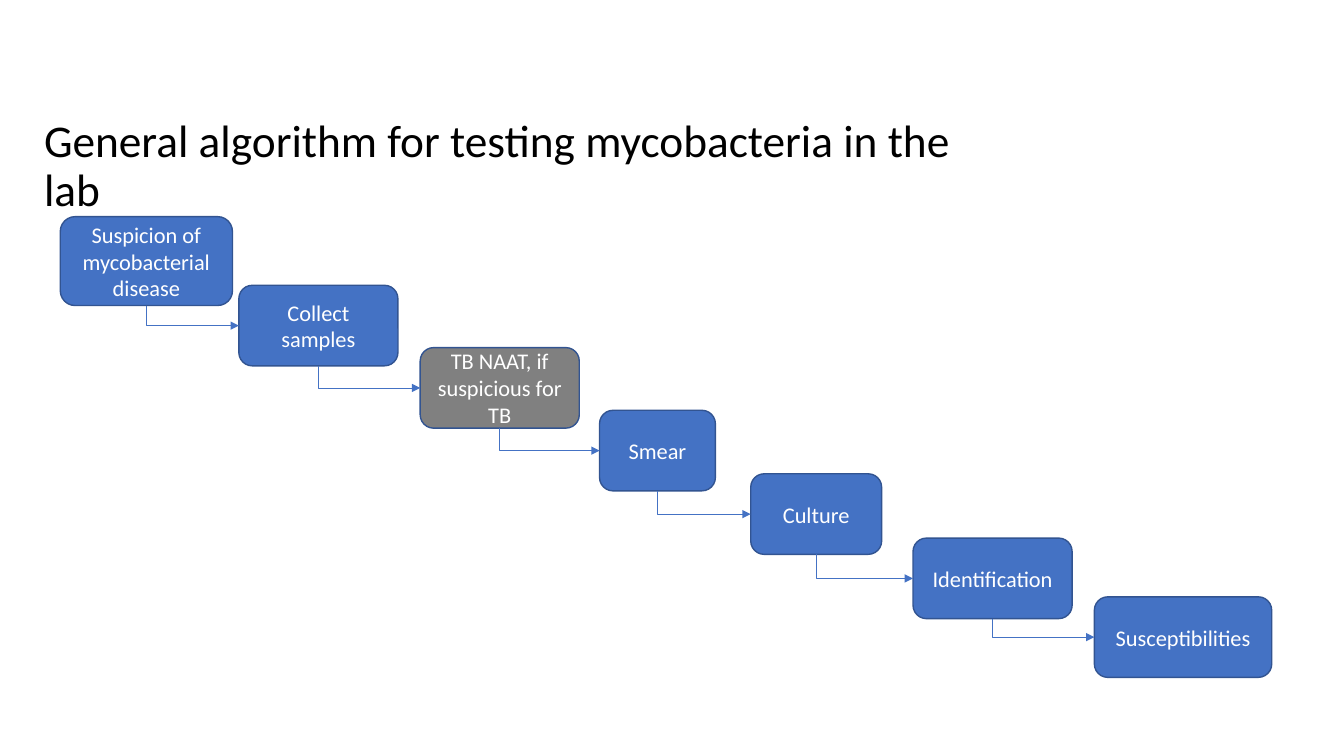
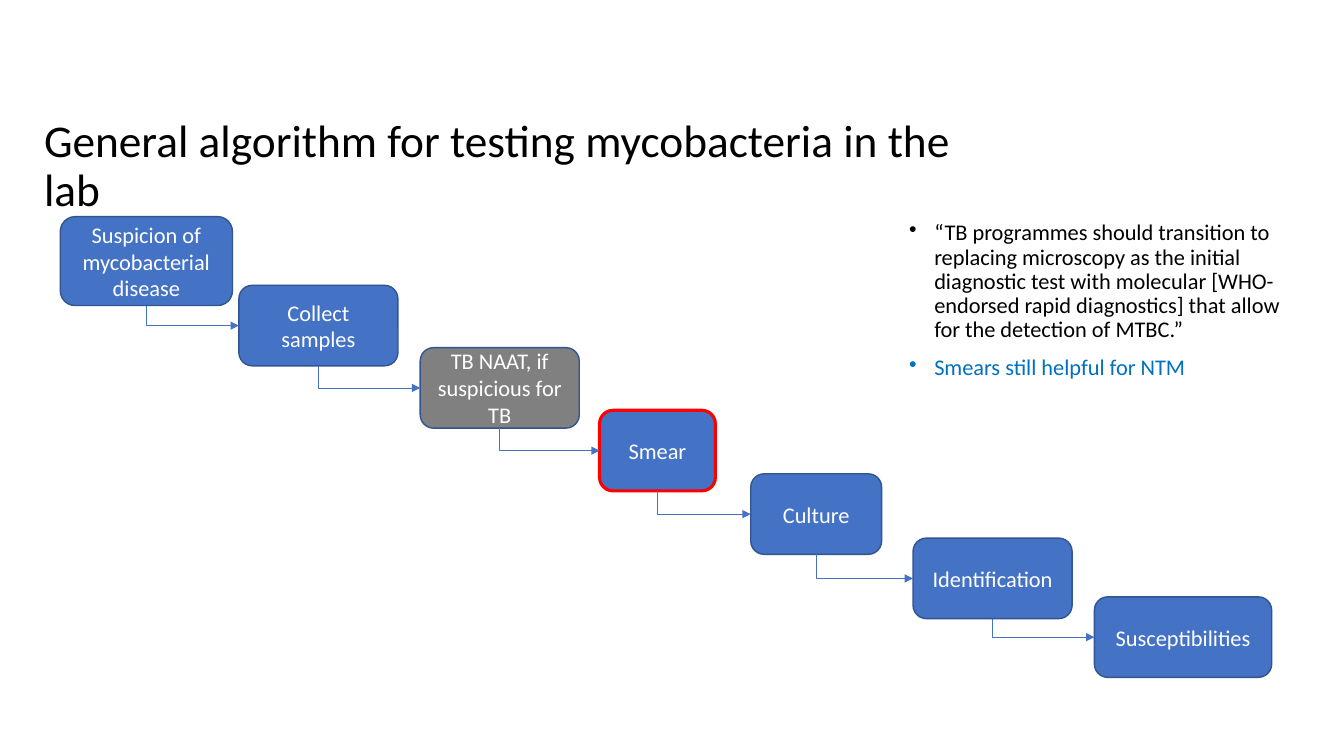
from lxml.etree import SubElement
from pptx import Presentation
from pptx.dml.color import RGBColor
from pptx.enum.shapes import MSO_CONNECTOR, MSO_SHAPE
from pptx.enum.text import MSO_ANCHOR, PP_ALIGN
from pptx.oxml.ns import qn
from pptx.util import Cm, Pt

COLORS = {
    "text": "000000",
    "light": "FFFFFF",
    "step": "4472C4",
    "optional": "808080",
    "outline": "325491",
    "highlight": "FF0000",
    "remark": "0070C0",
}
FONT = "Calibri"
TITLE = "General algorithm for testing mycobacteria in the lab"
STEP_HEIGHT = 2.03

# Steps: paragraphs, left, top, width, height in cm, fill
STEPS = [
    (["Suspicion of mycobacterial disease"], 1.52, 5.46, 4.34, 2.24, "step"),
    (["Collect", "samples"], 6.02, 7.19, 4.01, STEP_HEIGHT, "step"),
    (["TB NAAT, if suspicious for TB"], 10.59, 8.76, 4.01, STEP_HEIGHT, "optional"),
    (["Smear"], 15.11, 10.34, 2.92, STEP_HEIGHT, "step"),
    (["Culture"], 18.92, 11.94, 3.3, STEP_HEIGHT, "step"),
    (["Identification"], 23.01, 13.56, 4.01, STEP_HEIGHT, "step"),
    (["Susceptibilities"], 27.58, 15.04, 4.47, STEP_HEIGHT, "step"),
]

# Pages: highlighted step, remarks with their colours
PAGES = [
    (None, []),
    ("Smear", [
        ("“TB programmes should transition to replacing microscopy as the initial "
         "diagnostic test with molecular [WHO-endorsed rapid diagnostics] that allow "
         "for the detection of MTBC.”", "text"),
        ("Smears still helpful for NTM", "remark"),
    ]),
]


def write(box, lines, size=16, align=PP_ALIGN.LEFT, anchor=MSO_ANCHOR.TOP,
          spacing=1.0, space_before=0, bullet=False):
    """Fill a box with (text, colour) paragraphs."""
    frame = box.text_frame
    frame.word_wrap = True
    frame.vertical_anchor = anchor
    for index, (text, color) in enumerate(lines):
        para = frame.add_paragraph() if index else frame.paragraphs[0]
        para.alignment = align
        para.line_spacing = spacing
        para.space_before = Pt(space_before if index else 0)
        if bullet:
            properties = para._p.get_or_add_pPr()
            properties.set("marL", str(Cm(0.635)))
            properties.set("indent", str(-Cm(0.635)))
            SubElement(properties, qn("a:buChar")).set("char", "•")
        span = para.add_run()
        span.text = text
        span.font.name = FONT
        span.font.size = Pt(size)
        span.font.color.rgb = RGBColor.from_string(COLORS[color])


def join(page, source, target):
    """Lead an arrow down from the source and right into the target."""
    arrow = page.shapes.add_connector(MSO_CONNECTOR.ELBOW, 0, 0, 0, 0)
    arrow.begin_connect(source, 2)
    arrow.end_connect(target, 1)
    # One bend: a two-segment elbow, turned and mirrored about its centre
    left, top = arrow.begin_x, arrow.begin_y
    across, down = arrow.end_x - left, arrow.end_y - top
    arrow.left = left + (across - down) // 2
    arrow.top = top + (down - across) // 2
    arrow.width, arrow.height = down, across
    arrow.rotation = 270
    properties = arrow._element.spPr
    properties.find(qn("a:xfrm")).set("flipH", "1")
    properties.find(qn("a:prstGeom")).set("prst", "bentConnector2")
    arrow.line.color.rgb = RGBColor.from_string(COLORS["step"])
    arrow.line.width = Pt(0.5)
    SubElement(arrow.line._get_or_add_ln(), qn("a:tailEnd")).set("type", "triangle")
    SubElement(properties, qn("a:effectLst"))


deck = Presentation()
deck.slide_width, deck.slide_height = Cm(33.87), Cm(19.05)

for highlighted, remarks in PAGES:
    page = deck.slides.add_slide(deck.slide_layouts[6])

    # Title
    title = page.shapes.add_textbox(Cm(0.86), Cm(2.97), Cm(24.79), Cm(2.49))
    write(title, [(TITLE, "text")], size=32.4, anchor=MSO_ANCHOR.MIDDLE, spacing=0.9)

    # Staircase of steps, each joined to the one before
    previous = None
    for lines, left, top, width, height, fill in STEPS:
        step = page.shapes.add_shape(MSO_SHAPE.ROUNDED_RECTANGLE,
                                     Cm(left), Cm(top), Cm(width), Cm(height))
        step.shadow.inherit = False
        step.fill.solid()
        step.fill.fore_color.rgb = RGBColor.from_string(COLORS[fill])
        marked = lines == [highlighted]
        outline = COLORS["highlight" if marked else "outline"]
        step.line.color.rgb = RGBColor.from_string(outline)
        step.line.width = Pt(2.25 if marked else 1)
        write(step, [(line, "light") for line in lines],
              align=PP_ALIGN.CENTER, anchor=MSO_ANCHOR.MIDDLE)
        if previous is not None:
            join(page, previous, step)
        previous = step

    # Remarks
    if remarks:
        box = page.shapes.add_textbox(Cm(22.66), Cm(5.46), Cm(9.88), Cm(7.01))
        write(box, remarks, spacing=0.9, space_before=10, bullet=True)

deck.save("out.pptx")
